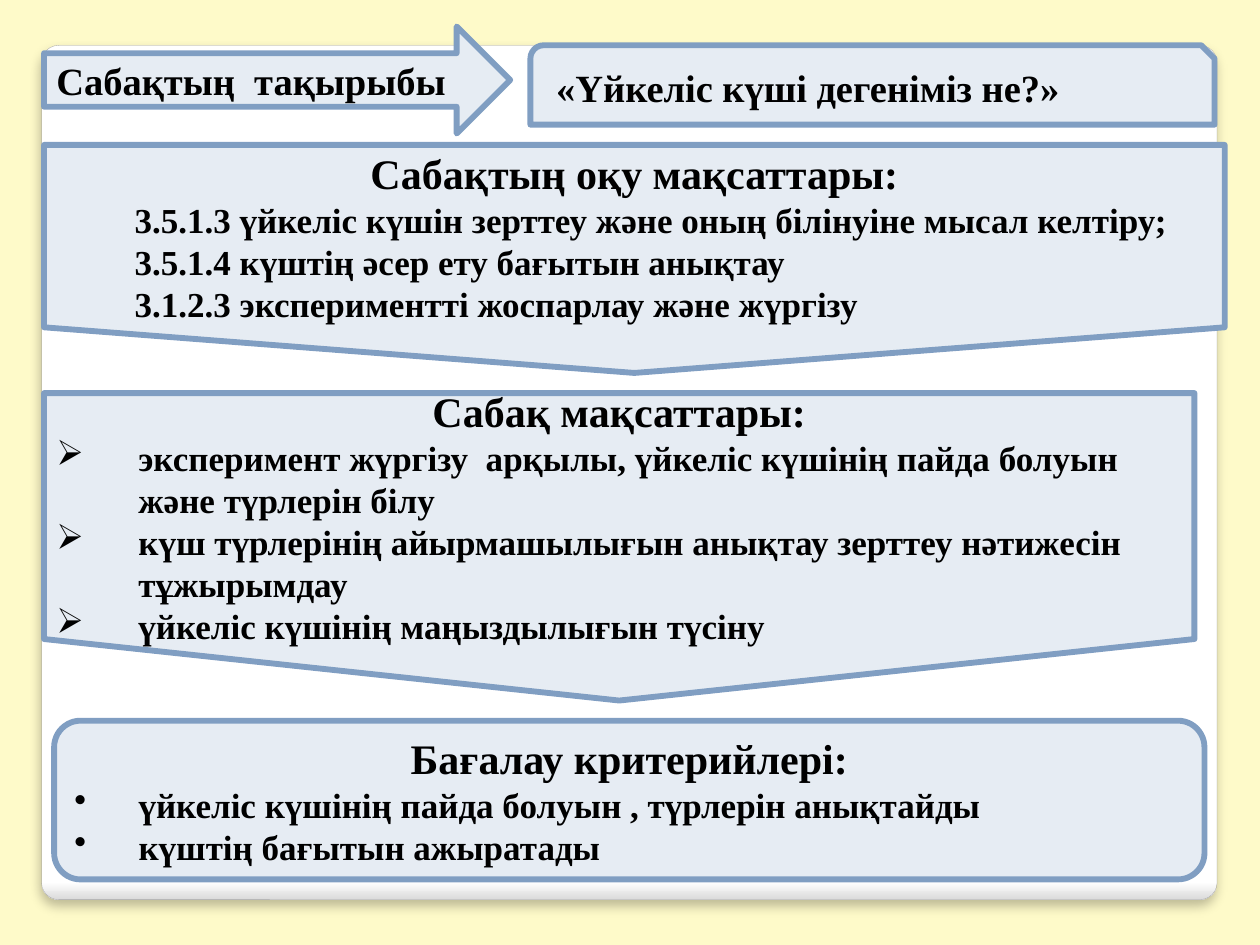
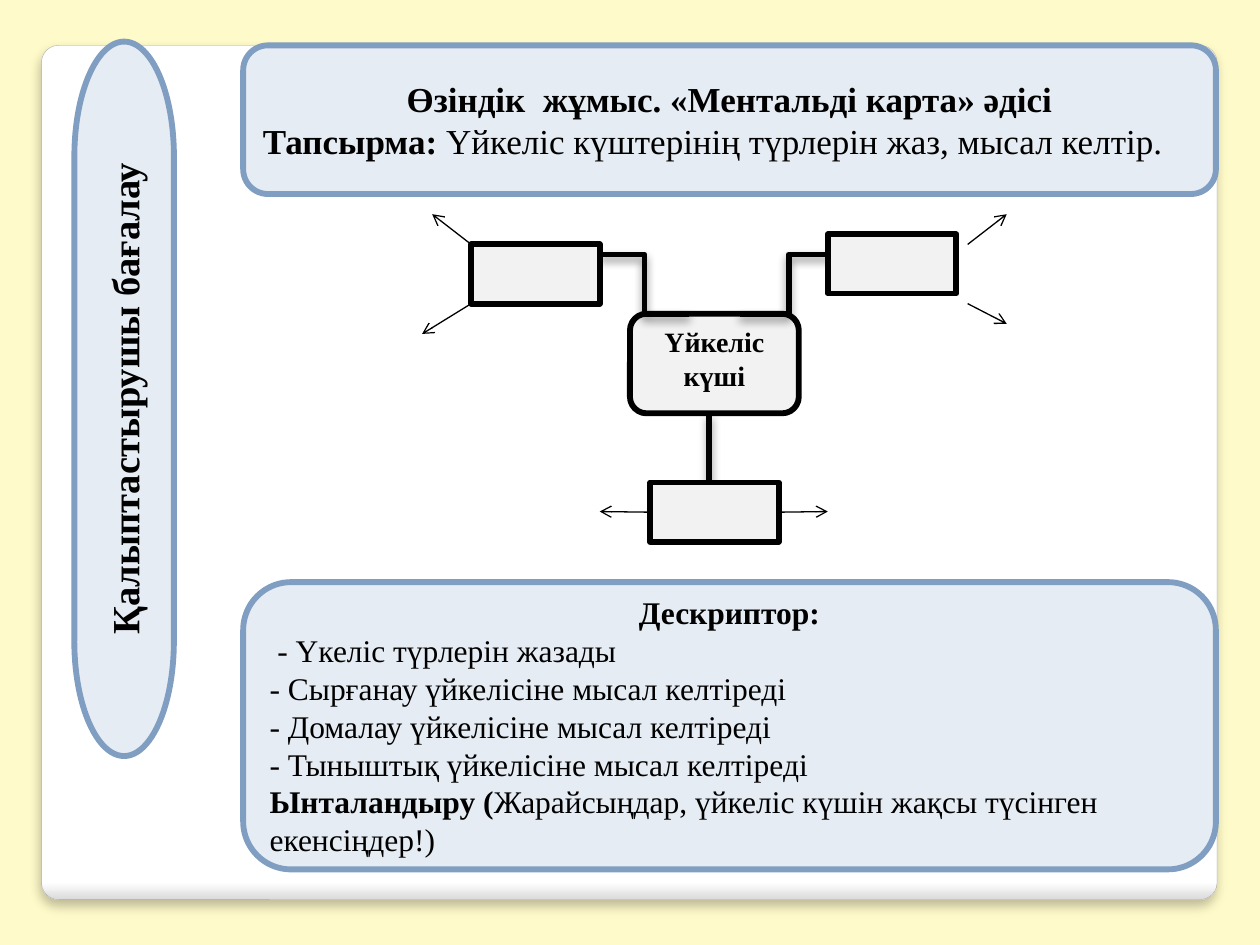
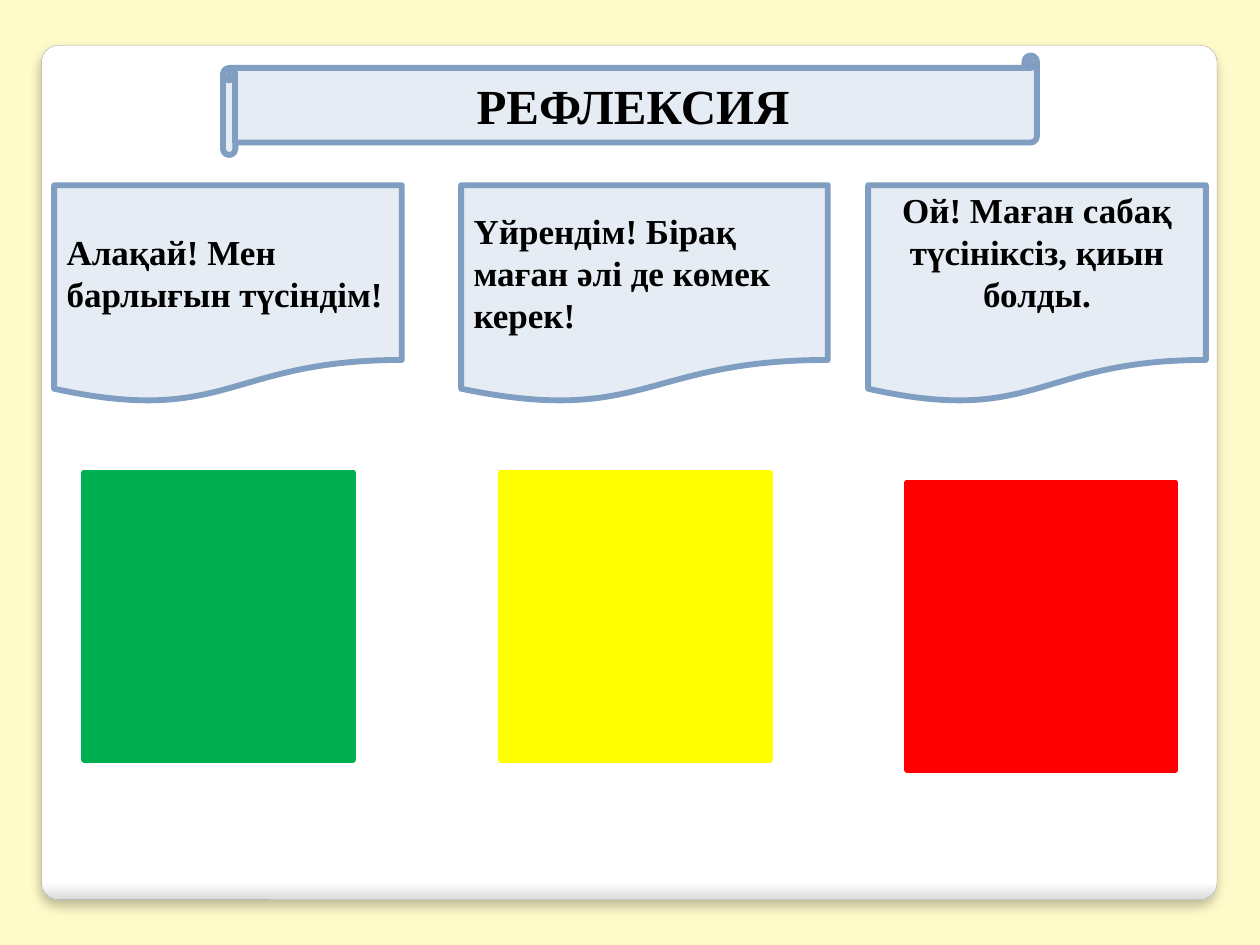
from dataclasses import dataclass

from lxml import etree
from pptx import Presentation
from pptx.dml.color import RGBColor
from pptx.enum.shapes import MSO_CONNECTOR, MSO_SHAPE
from pptx.enum.text import MSO_ANCHOR, PP_ALIGN
from pptx.oxml.ns import qn
from pptx.util import Inches, Pt

LEFT, CENTER = PP_ALIGN.LEFT, PP_ALIGN.CENTER
TOP, MIDDLE = MSO_ANCHOR.TOP, MSO_ANCHOR.MIDDLE
STRAIGHT, ELBOW = MSO_CONNECTOR.STRAIGHT, MSO_CONNECTOR.ELBOW
RECT, ROUNDED = MSO_SHAPE.RECTANGLE, MSO_SHAPE.ROUNDED_RECTANGLE
ARROW = MSO_SHAPE.RIGHT_ARROW
SNIPPED = MSO_SHAPE.SNIP_ROUND_RECTANGLE
PENNANT = MSO_SHAPE.FLOWCHART_OFFPAGE_CONNECTOR
CAPSULE = MSO_SHAPE.FLOWCHART_TERMINATOR
SOFT_BOX = MSO_SHAPE.FLOWCHART_ALTERNATE_PROCESS
DOCUMENT = MSO_SHAPE.FLOWCHART_DOCUMENT
SCROLL = MSO_SHAPE.HORIZONTAL_SCROLL
LEFT_SIDE, RIGHT_SIDE = 1, 3


@dataclass(frozen=True)
class Theme:
    font: str = "Times New Roman"
    page: str = "FEFAC9"
    panel: str = "FFFFFF"
    panel_edge: str = "DADADA"
    panel_line: str = "A4A4A4"
    box: str = "E6ECF3"
    box_line: str = "809EC2"
    node: str = "F2F2F2"
    ink: str = "000000"
    green: str = "00B050"
    yellow: str = "FFFF00"
    red: str = "FF0000"
    title: int = 28
    heading: int = 24
    label: int = 22
    body: int = 20
    detail: int = 18
    node_text: int = 16
    thick: float = 3.35
    thin: float = 0.75
    hairline: float = 0.16


def rgb(value):
    return RGBColor.from_string(value)


def add_effects(element, shadow=None):
    """Set the effect list; shadow is (opacity %, blur pt, distance pt), cast downwards."""
    properties = element.spPr
    effects = properties.find(qn("a:effectLst"))
    if effects is None:
        effects = etree.SubElement(properties, qn("a:effectLst"))
    if shadow:
        opacity, blur, distance = shadow
        outer = etree.SubElement(effects, qn("a:outerShdw"), blurRad=str(Pt(blur)),
                                 dist=str(Pt(distance)), dir="5400000", rotWithShape="0")
        color = etree.SubElement(outer, qn("a:srgbClr"), val="000000")
        etree.SubElement(color, qn("a:alpha"), val=str(opacity * 1000))


class Deck:
    def __init__(self, theme):
        self.theme = theme
        self.prs = Presentation()
        self.prs.slide_width, self.prs.slide_height = Inches(10), Inches(7.5)
        page = self.prs.slide_master.background.fill
        page.solid()
        page.fore_color.rgb = rgb(theme.page)
        self.slide = None

    def new_slide(self):
        self.slide = self.prs.slides.add_slide(self.prs.slide_layouts[6])
        self.panel()

    def panel(self):
        panel = self.shape(ROUNDED, 0.33, 0.36, 9.33, 6.78, line=self.theme.panel_line,
                           width=self.theme.hairline)
        panel.adjustments[0] = 0.02
        panel.fill.gradient()
        panel.fill.gradient_angle = 270
        edge_stops = ((0.98, self.theme.panel), (1, self.theme.panel_edge))
        for stop, (position, color) in zip(panel.fill.gradient_stops, edge_stops):
            stop.position = position
            stop.color.rgb = rgb(color)
        add_effects(panel._element, (25, 6, 4))

    def shape(self, kind, x, y, w, h, fill=None, line=None, width=None, anchor=MIDDLE):
        shape = self.slide.shapes.add_shape(kind, Inches(x), Inches(y), Inches(w), Inches(h))
        shape.shadow.inherit = False
        shape.fill.solid()
        shape.fill.fore_color.rgb = rgb(fill or self.theme.box)
        shape.line.color.rgb = rgb(line or self.theme.box_line)
        shape.line.width = Pt(width or self.theme.thick)
        shape.text_frame.vertical_anchor = anchor
        return shape

    def node(self, kind, x, y, w, h):
        return self.shape(kind, x, y, w, h, self.theme.node, self.theme.ink, anchor=TOP)

    def text(self, shape, text, size=None, bold=True, align=LEFT, margin=0, bullet=None,
             joined=False):
        """Add a paragraph, or with joined a run that continues the last one."""
        frame = shape.text_frame
        paragraph = frame.paragraphs[-1]
        if paragraph.runs and not joined:
            paragraph = frame.add_paragraph()
        if not joined:
            paragraph.alignment = align
            properties = paragraph._p.get_or_add_pPr()
            properties.set("marL", str(Inches(margin)))
            properties.set("indent", str(-Inches(margin) if bullet else 0))
            if bullet:
                etree.SubElement(properties, qn("a:buChar"), char=bullet)
        run = paragraph.add_run()
        run.text = text
        run.font.name = self.theme.font
        run.font.size = Pt(size or self.theme.body)
        run.font.bold = bold
        run.font.color.rgb = rgb(self.theme.ink)

    def heading(self, shape, text, size=None):
        self.text(shape, text, size or self.theme.heading, align=CENTER)

    def connector(self, start, end, kind=STRAIGHT, width=None, shadow=None):
        ends = [Inches(value) for value in (*start, *end)]
        connector = self.slide.shapes.add_connector(kind, *ends)
        connector.line.color.rgb = rgb(self.theme.ink)
        connector.line.width = Pt(width or self.theme.thick)
        add_effects(connector._element, shadow)
        return connector

    def branch(self, start, end, kind=STRAIGHT):
        self.connector(start, end, kind, shadow=(40, 5.2, 3))

    def arrow(self, start, end):
        arrow = self.connector(start, end, width=self.theme.thin)
        etree.SubElement(arrow.line._get_or_add_ln(), qn("a:tailEnd"), type="arrow")
        return arrow


def goals_slide(deck):
    theme = deck.theme
    deck.new_slide()

    topic_label = deck.shape(ARROW, 0.35, 0.21, 3.7, 0.85)
    deck.text(topic_label, "Сабақтың  тақырыбы", theme.label)
    topic = deck.shape(SNIPPED, 4.21, 0.36, 5.43, 0.63)
    deck.text(topic, " «Үйкеліс күші дегеніміз не?»", theme.label)

    learning_goals = deck.shape(PENNANT, 0.35, 1.15, 9.37, 1.81)
    deck.heading(learning_goals, "Сабақтың оқу мақсаттары:")
    for goal in ("3.5.1.3 үйкеліс күшін зерттеу және оның білінуіне мысал келтіру;",
                 "3.5.1.4 күштің әсер ету бағытын анықтау",
                 "3.1.2.3 экспериментті жоспарлау және жүргізу"):
        deck.text(learning_goals, goal, margin=0.62)

    lesson_goals = deck.shape(PENNANT, 0.35, 3.12, 9.13, 2.44)
    deck.heading(lesson_goals, "Сабақ мақсаттары:")
    for goal in ("эксперимент жүргізу  арқылы, үйкеліс күшінің пайда болуын және түрлерін білу",
                 "күш түрлерінің айырмашылығын анықтау зерттеу нәтижесін тұжырымдау",
                 "үйкеліс күшінің маңыздылығын түсіну"):
        deck.text(lesson_goals, goal, margin=0.65, bullet="➢")

    criteria = deck.shape(ROUNDED, 0.43, 5.72, 9.13, 1.26)
    deck.heading(criteria, "Бағалау критерийлері:")
    for criterion in ("үйкеліс күшінің пайда болуын , түрлерін анықтайды",
                      "күштің бағытын ажыратады"):
        deck.text(criteria, criterion, margin=0.51, bullet="•")


def mind_map(deck):
    center = deck.node(ROUNDED, 5, 2.49, 1.34, 0.79)
    deck.heading(center, "Үйкеліс күші", deck.theme.node_text)
    deck.branch((6.65, 2.02), (5.87, 2.49), ELBOW)
    deck.branch((4.76, 2.02), (5.47, 2.49), ELBOW)
    deck.branch((5.63, 3.28), (5.63, 3.83))

    right, bottom, left = (deck.node(RECT, x, y, 1.02, 0.47)
                           for x, y in ((6.57, 1.86), (5.16, 3.83), (3.74, 1.94)))
    for start, end in (((3.74, 1.94), (3.43, 1.7)), ((3.74, 2.41), (3.35, 2.65)),
                       ((7.68, 1.94), (7.99, 1.7)), ((7.68, 2.41), (7.99, 2.57))):
        deck.arrow(start, end)
    for side, x, tip in ((LEFT_SIDE, 5.16, 4.76), (RIGHT_SIDE, 6.18, 6.57)):
        deck.arrow((x, 4.06), (tip, 4.06)).begin_connect(bottom, side)


def task_slide(deck):
    theme = deck.theme
    deck.new_slide()

    assessment = deck.shape(CAPSULE, -1.85, 2.77, 5.67, 0.79)
    assessment.rotation = 270
    deck.heading(assessment, "Қалыптастырушы бағалау", theme.label)

    task = deck.shape(SOFT_BOX, 1.93, 0.36, 7.72, 1.18)
    deck.heading(task, "Өзіндік  жұмыс. «Ментальді карта» әдісі", theme.body)
    deck.text(task, "Тапсырма: ")
    deck.text(task, "Үйкеліс күштерінің түрлерін жаз, мысал келтір.", bold=False, joined=True)

    descriptor = deck.shape(SOFT_BOX, 1.93, 4.62, 7.72, 2.28)
    deck.heading(descriptor, "Дескриптор:", theme.detail)
    for point in (" - Үкеліс түрлерін жазады",
                  "- Сырғанау үйкелісіне мысал келтіреді",
                  "- Домалау үйкелісіне мысал келтіреді",
                  "- Тыныштық үйкелісіне мысал келтіреді"):
        deck.text(descriptor, point, theme.detail, bold=False)
    deck.text(descriptor, "Ынталандыру (", theme.detail)
    deck.text(descriptor, "Жарайсыңдар, үйкеліс күшін жақсы түсінген екенсіңдер!)",
              theme.detail, bold=False, joined=True)

    mind_map(deck)


def reflection_slide(deck):
    theme = deck.theme
    deck.new_slide()

    answers = ((0.43, 2.76, "Алақай! Мен барлығын түсіндім!", LEFT),
               (3.66, 2.91, "Үйрендім! Бірақ маған әлі де көмек керек!", LEFT),
               (6.89, 2.68, "Ой! Маған сабақ түсініксіз, қиын болды.", CENTER))
    for x, width, words, align in answers:
        answer = deck.shape(DOCUMENT, x, 1.47, width, 1.73)
        deck.text(answer, words, align=align)
    answer.text_frame.margin_bottom = Inches(0.38)

    title = deck.shape(SCROLL, 1.77, 0.44, 6.46, 0.79)
    deck.heading(title, "РЕФЛЕКСИЯ", theme.title)

    for x, y, color in ((0.67, 3.75, theme.green), (3.98, 3.75, theme.yellow),
                        (7.2, 3.83, theme.red)):
        deck.shape(RECT, x, y, 2.13, 2.28, color, color)


def main():
    deck = Deck(Theme())
    goals_slide(deck)
    task_slide(deck)
    reflection_slide(deck)
    deck.prs.save("out.pptx")


if __name__ == "__main__":
    main()
